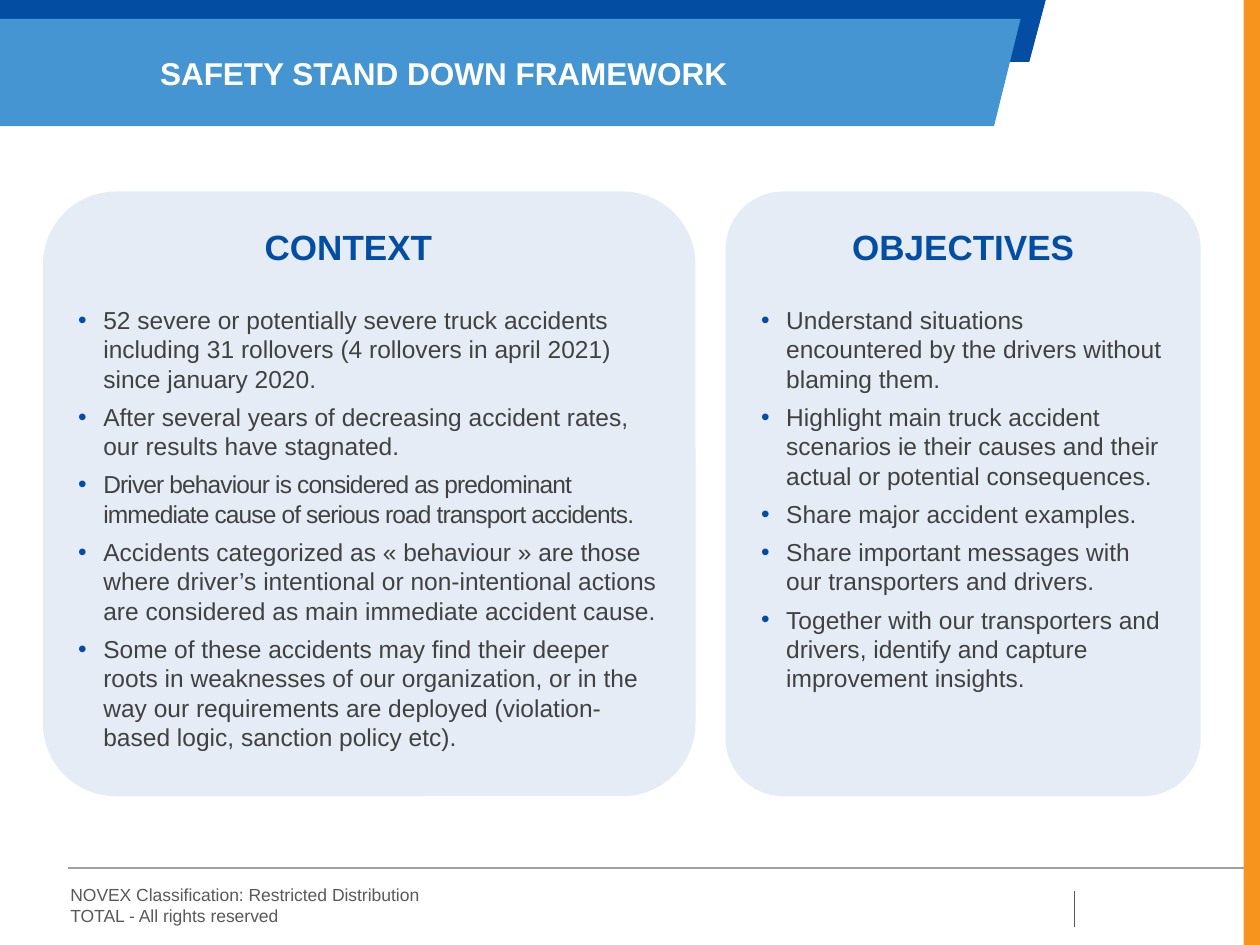
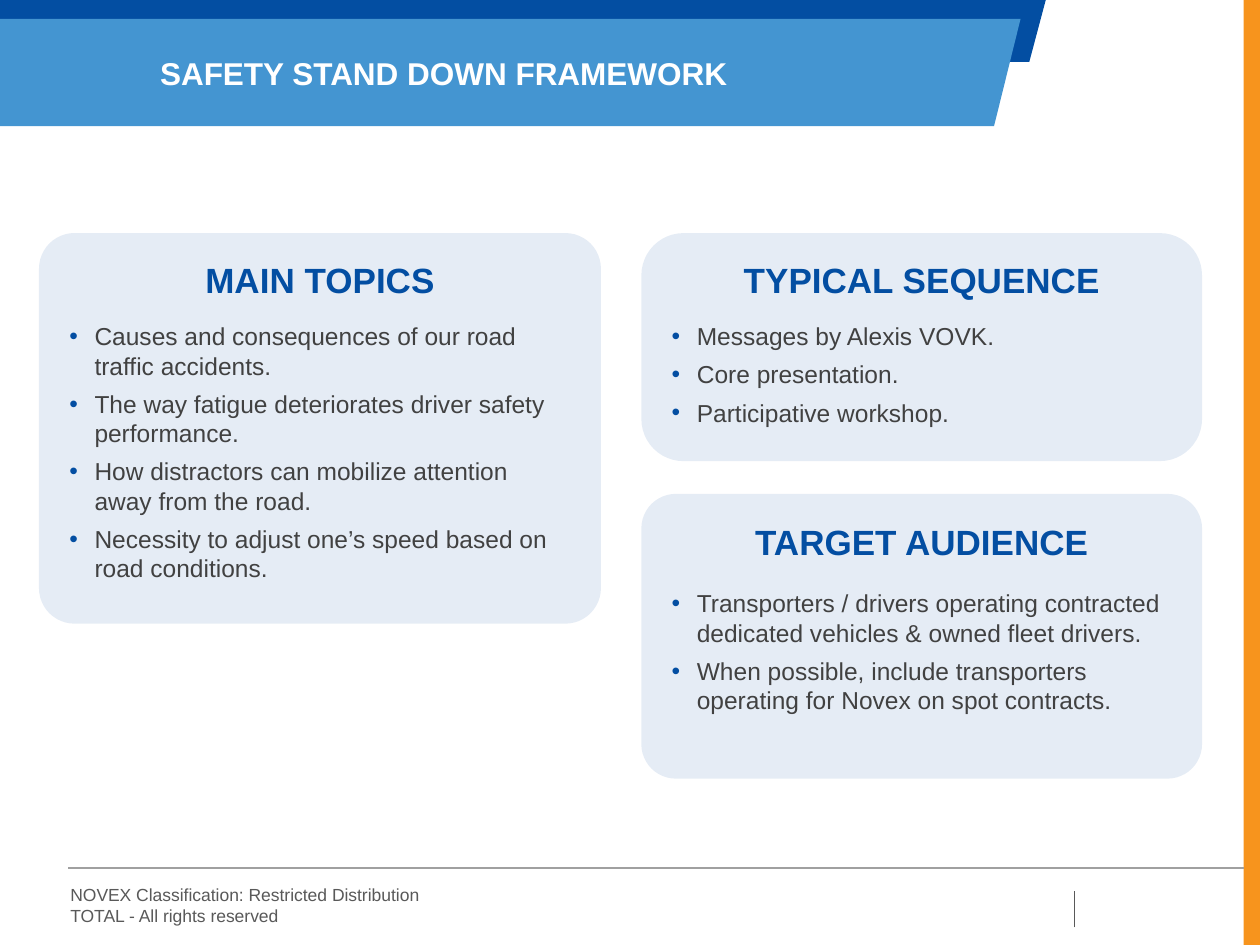
from dataclasses import dataclass

from lxml import etree
from pptx import Presentation
from pptx.dml.color import RGBColor
from pptx.enum.shapes import MSO_CONNECTOR as CONN, MSO_SHAPE as SHAPE
from pptx.enum.text import MSO_ANCHOR as ANCHOR, MSO_AUTO_SIZE as AUTO, PP_ALIGN as ALIGN
from pptx.oxml.ns import qn
from pptx.util import Inches, Pt


@dataclass(frozen=True)
class Theme:
    font: str = "Arial"
    navy: str = "034EA2"
    sky: str = "4495D1"
    orange: str = "F7941D"
    white: str = "FFFFFF"
    text: str = "414141"
    footer: str = "595959"
    rule: str = "A0A0A0"
    title_size: int = 18
    heading_size: int = 20
    list_size: int = 14
    footer_size: int = 10
    card_opacity: int = 10


@dataclass(frozen=True)
class Card:
    """A rounded panel; heading_dy and list_dy are measured from its top."""
    x: float
    y: float
    w: float
    h: float
    radius: float
    heading: str
    items: tuple
    heading_dy: float
    list_dy: float
    inset: float
    heading_w: float = 0
    tight_item: int = -1


T = Theme()
COMPARISON_LAYOUT = 4
TITLE = "SAFETY STAND DOWN FRAMEWORK"
FOOTER = ("NOVEX Classification: Restricted Distribution", "TOTAL - All rights reserved")

CONTEXT = Card(
    0.34, 1.52, 5.18, 4.8, 0.121, "CONTEXT",
    ("52 severe or potentially severe truck accidents including 31 rollovers "
     "(4 rollovers in april 2021) since january 2020.",
     "After several years of decreasing accident rates, our results have stagnated.",
     "Driver behaviour is considered as predominant immediate cause of serious "
     "road transport accidents.",
     "Accidents categorized as « behaviour » are those where driver’s intentional or "
     "non-intentional actions are considered as main immediate accident cause.",
     "Some of these accidents may find their deeper roots in weaknesses of our "
     "organization, or in the way our requirements are deployed (violation-based "
     "logic, sanction policy etc)."),
    0.23, 0.85, 0.28, heading_w=4.85, tight_item=2)
OBJECTIVES = Card(
    5.76, 1.52, 3.77, 4.8, 0.121, "OBJECTIVES",
    ("Understand situations encountered by the drivers without blaming them.",
     "Highlight main truck accident scenarios ie their causes and their actual or "
     "potential consequences.",
     "Share major accident examples.",
     "Share important messages with our transporters and drivers.",
     "Together with our transporters and drivers, identify and capture improvement "
     "insights."),
    0.23, 0.85, 0.28)
TOPICS = Card(
    0.31, 1.85, 4.46, 3.1, 0.091, "MAIN TOPICS",
    ("Causes and consequences of our road traffic accidents.",
     "The way fatigue deteriorates driver safety performance.",
     "How distractors can mobilize attention away from the road.",
     "Necessity to adjust one’s speed based on road conditions."),
    0.16, 0.65, 0.24)
SEQUENCE = Card(
    5.09, 1.85, 4.45, 1.81, 0.185, "TYPICAL SEQUENCE",
    ("Messages by Alexis VOVK.", "Core presentation.", "Participative workshop."),
    0.16, 0.65, 0.24)
AUDIENCE = Card(
    5.09, 3.92, 4.45, 2.26, 0.121, "TARGET AUDIENCE",
    ("Transporters / drivers operating contracted dedicated vehicles & owned fleet "
     "drivers.",
     "When possible, include transporters operating for Novex on spot contracts."),
    0.17, 0.7, 0.24)


def rgb(color):
    return RGBColor.from_string(color)


def set_font(p, size, color, bold=False):
    for r in p.runs:
        r.font.name = T.font
        r.font.size = Pt(size)
        r.font.bold = bold
        r.font.color.rgb = rgb(color)


def set_frame(sp, anchor, side=0.1, edge=0.05):
    tf = sp.text_frame
    tf.word_wrap = True
    tf.auto_size = AUTO.NONE
    tf.vertical_anchor = anchor
    tf.margin_left = tf.margin_right = Inches(side)
    tf.margin_top = tf.margin_bottom = Inches(edge)
    return tf


def place(slide, sp, x, y, w, h):
    """Move a placeholder and bring it in front of the shapes drawn so far."""
    sp.left, sp.top, sp.width, sp.height = map(Inches, (x, y, w, h))
    slide.shapes.element.append(sp.element)


def paint(sp, color):
    sp.shadow.inherit = False
    sp.fill.solid()
    sp.fill.fore_color.rgb = rgb(color)
    sp.line.fill.background()


def add_band(slide, points, color):
    start, *rest = [(Inches(x), Inches(y)) for x, y in points]
    builder = slide.shapes.build_freeform(*start)
    builder.add_line_segments(rest, close=True)
    paint(builder.convert_to_shape(), color)


def add_rule(slide, x1, y1, x2, y2, color):
    line = slide.shapes.add_connector(CONN.STRAIGHT, *map(Inches, (x1, y1, x2, y2)))
    line.line.color.rgb = rgb(color)
    line.line.width = Pt(0.75)
    etree.SubElement(line.element.spPr, qn("a:effectLst"))


def add_box(slide, shape, x, y, w, h, color):
    sp = slide.shapes.add_shape(shape, *map(Inches, (x, y, w, h)))
    paint(sp, color)
    return sp


def add_footer(slide):
    add_rule(slide, 0.54, 6.89, 9.87, 6.89, T.rule)
    add_rule(slide, 8.53, 7.36, 8.53, 7.07, T.footer)
    sp = slide.shapes.add_textbox(*map(Inches, (0.46, 6.97, 5.39, 0.44)))
    tf = set_frame(sp, ANCHOR.TOP)
    tf.text = "\n".join(FOOTER)
    for p in tf.paragraphs:
        set_font(p, T.footer_size, T.footer)


def add_title(slide):
    add_band(slide, [(0, 0), (8.3, 0), (8.17, 0.49), (0, 0.49)], T.navy)
    add_band(slide, [(0, 0.15), (8.1, 0.15), (7.89, 1), (0, 1)], T.sky)
    sp = slide.shapes.title
    place(slide, sp, 1.27, 0.43, 6, 0.3)
    tf = set_frame(sp, ANCHOR.MIDDLE, 0, 0)
    tf.text = TITLE
    p = tf.paragraphs[0]
    p.alignment = ALIGN.LEFT
    set_font(p, T.title_size, T.white, bold=True)


def add_bullet(p):
    pPr = p._p.get_or_add_pPr()
    pPr.set("marL", str(Inches(0.2)))
    pPr.set("indent", str(Inches(-0.2)))
    color = etree.SubElement(pPr, qn("a:buClr"))
    etree.SubElement(color, qn("a:srgbClr"), val=T.navy)
    etree.SubElement(pPr, qn("a:buFont"), typeface=T.font)
    etree.SubElement(pPr, qn("a:buChar"), char="•")


def add_heading(slide, card):
    box = (card.x, card.y + card.heading_dy, card.heading_w or card.w, 0.42)
    sp = slide.shapes.add_textbox(*map(Inches, box))
    tf = set_frame(sp, ANCHOR.MIDDLE)
    tf.text = card.heading
    p = tf.paragraphs[0]
    p.alignment = ALIGN.CENTER
    set_font(p, T.heading_size, T.navy, bold=True)


def fill_list(slide, body, card):
    place(slide, body, card.x, card.y + card.list_dy, card.w, card.h - card.list_dy)
    tf = set_frame(body, ANCHOR.TOP, card.inset)
    tf.text = "\n".join(card.items)
    for i, p in enumerate(tf.paragraphs):
        add_bullet(p)
        p.alignment = ALIGN.LEFT
        p.space_before = Pt(5 if i else 0)
        set_font(p, T.list_size, T.text)
        if i == card.tight_item:
            p.runs[0].font._element.set("spc", "-50")


def add_card(slide, body, card):
    sp = add_box(slide, SHAPE.ROUNDED_RECTANGLE, card.x, card.y, card.w, card.h, T.navy)
    sp.adjustments[0] = card.radius
    color = sp.element.spPr.find(f"{qn('a:solidFill')}/{qn('a:srgbClr')}")
    etree.SubElement(color, qn("a:alpha"), val=str(T.card_opacity * 1000))
    add_heading(slide, card)
    fill_list(slide, body, card)


def add_slide(prs, cards):
    slide = prs.slides.add_slide(prs.slide_layouts[COMPARISON_LAYOUT])
    bodies = [ph for ph in slide.placeholders if ph.placeholder_format.idx > 0]
    add_box(slide, SHAPE.RECTANGLE, 9.87, 0, 0.13, 7.5, T.orange)
    add_footer(slide)
    add_title(slide)
    for body, card in zip(bodies, cards):
        add_card(slide, body, card)
    for body in bodies[len(cards):]:
        slide.shapes.element.remove(body.element)


def main():
    prs = Presentation()
    prs.slide_width, prs.slide_height = Inches(10), Inches(7.5)
    add_slide(prs, (CONTEXT, OBJECTIVES))
    add_slide(prs, (TOPICS, SEQUENCE, AUDIENCE))
    prs.save("out.pptx")


if __name__ == "__main__":
    main()
